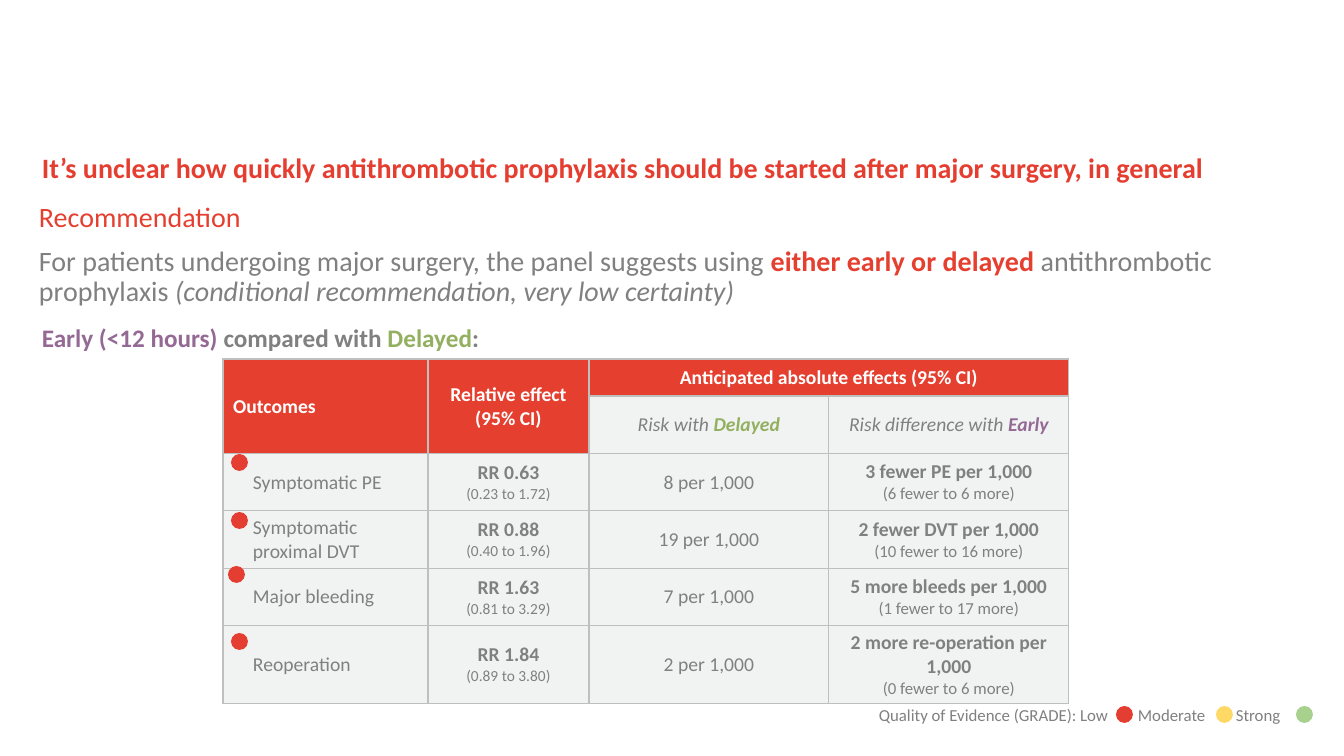
from lxml import etree
from pptx import Presentation
from pptx import util as u
from pptx.dml.color import RGBColor
from pptx.enum import shapes, text
from pptx.oxml import ns

EMU_PER_PX = 12192000 / 1344
FONT = "Calibri"
RED = RGBColor(0xE5, 0x3F, 0x2F)
TITLE_RED = RGBColor(0xE5, 0x3E, 0x31)
DOT_RED = RGBColor(0xE4, 0x3E, 0x32)
DOT_YELLOW = RGBColor(0xFF, 0xD9, 0x66)
DOT_GREEN = RGBColor(0xA9, 0xD1, 0x8E)
GREY = RGBColor(0x80, 0x80, 0x80)
PURPLE = RGBColor(0x94, 0x6A, 0x95)
GREEN = RGBColor(0x92, 0xB0, 0x60)
WHITE = RGBColor(0xFF, 0xFF, 0xFF)
PALE = RGBColor(0xF1, 0xF3, 0xF2)
BORDER = RGBColor(0xBF, 0xBF, 0xBF)

COLUMN_WIDTHS = [205, 161, 240, 240]
ROW_HEIGHTS = [37, 32, 57, 57, 57, 57]
# outcome, relative effect, its CI, risk with delayed, risk difference, its CI
OUTCOMES = [
    ("Symptomatic PE", "RR 0.63", "(0.23 to 1.72)", "8 per 1,000",
     "3 fewer PE per 1,000", "(6 fewer to 6 more)"),
    ("Symptomatic proximal DVT", "RR 0.88", "(0.40 to 1.96)", "19 per 1,000",
     "2 fewer DVT per 1,000", "(10 fewer to 16 more)"),
    ("Major bleeding", "RR 1.63", "(0.81 to 3.29)", "7 per 1,000",
     "5 more bleeds per 1,000", "(1 fewer to 17 more)"),
    ("Reoperation", "RR 1.84", "(0.89 to 3.80)", "2 per 1,000",
     "2 more re-operation per 1,000", "(0 fewer to 6 more)"),
]
OUTCOME_DOTS = [(231, 454), (231, 512), (228, 566), (231, 633)]
LEGEND_DOTS = [(1116, DOT_RED), (1216, DOT_YELLOW), (1296, DOT_GREEN)]
DOT_SIZE = 17


def px(length):
    return u.Emu(round(length * EMU_PER_PX))


def add_span(para, content, size=14, color=GREY, bold=False, italic=False):
    span = para.add_run()
    span.text = content
    font = span.font
    font.name, font.size, font.color.rgb = FONT, u.Pt(size), color
    font.bold, font.italic = bold, italic


def fill_paras(frame, paras, align=None, spacing=None, before=0):
    """Write paragraphs, each a list of (text, format) spans."""
    for index, spans in enumerate(paras):
        para = frame.add_paragraph() if index else frame.paragraphs[0]
        para.alignment = align
        para.line_spacing = spacing
        if index and before:
            para.space_before = u.Pt(before)
        for content, style in spans:
            add_span(para, content, **style)


def add_box(page, left, top, width, height, inset=None):
    frame = page.shapes.add_textbox(px(left), px(top), px(width), px(height)).text_frame
    frame.word_wrap = True
    if inset is not None:
        frame.margin_left = frame.margin_right = px(inset)
        frame.margin_top = frame.margin_bottom = px(inset)
    return frame


def add_dot(page, left, top, color):
    dot = page.shapes.add_shape(shapes.MSO_SHAPE.OVAL, px(left), px(top),
                                px(DOT_SIZE), px(DOT_SIZE))
    dot.shadow.inherit = False
    dot.fill.solid()
    dot.fill.fore_color.rgb = color
    dot.line.fill.background()


def add_tab_stops(para, positions):
    stops = etree.SubElement(para._p.get_or_add_pPr(), ns.qn("a:tabLst"))
    for position in positions:
        etree.SubElement(stops, ns.qn("a:tab"), pos=str(px(position)), algn="l")


def style_cell(cell, color):
    """Border first, then fill, as the schema orders them."""
    properties = cell._tc.get_or_add_tcPr()
    for side in ("lnL", "lnR", "lnT", "lnB"):
        line = etree.SubElement(properties, ns.qn(f"a:{side}"), w=str(u.Pt(1)))
        fill = etree.SubElement(line, ns.qn("a:solidFill"))
        etree.SubElement(fill, ns.qn("a:srgbClr"), val=str(BORDER))
    cell.fill.solid()
    cell.fill.fore_color.rgb = color
    cell.vertical_anchor = text.MSO_ANCHOR.MIDDLE


def add_outcome_table(page):
    table = page.shapes.add_table(
        len(ROW_HEIGHTS), len(COLUMN_WIDTHS), px(223), px(359),
        px(sum(COLUMN_WIDTHS)), px(sum(ROW_HEIGHTS))).table
    table.first_row = table.horz_banding = False
    for column, width in zip(table.columns, COLUMN_WIDTHS):
        column.width = px(width)
    for row, height in zip(table.rows, ROW_HEIGHTS):
        row.height = px(height)

    head = dict(color=WHITE, bold=True)
    lead = dict(italic=True)
    rows = [
        [[[("Outcomes", head)]], [[("Relative effect (95% CI)", head)]],
         [[("Anticipated absolute effects (95% CI)", head)]], []],
        [[], [],
         [[("Risk with ", lead), ("Delayed", dict(color=GREEN, bold=True, italic=True))]],
         [[("Risk difference with ", lead),
           ("Early", dict(color=PURPLE, bold=True, italic=True))]]],
    ]
    for outcome, ratio, ratio_ci, risk, difference, difference_ci in OUTCOMES:
        rows.append([
            [[(outcome, {})]],
            [[(ratio, dict(bold=True))], [(ratio_ci, dict(size=11))]],
            [[(risk, {})]],
            [[(difference, dict(bold=True))], [(difference_ci, dict(size=12))]],
        ])
    for r, row in enumerate(rows):
        for c, paras in enumerate(row):
            cell = table.cell(r, c)
            style_cell(cell, RED if r == 0 or (r == 1 and c < 2) else PALE)
            fill_paras(cell.text_frame, paras, text.PP_ALIGN.CENTER if c else None)
            if r > 1 and c == 0:
                cell.margin_left = px(30)
    table.cell(0, 0).merge(table.cell(1, 0))
    table.cell(0, 1).merge(table.cell(1, 1))
    table.cell(0, 2).merge(table.cell(0, 3))


def add_legend(page):
    frame = add_box(page, 869, 700, 457, 30)
    add_tab_stops(frame.paragraphs[0], [259, 357])
    fill_paras(frame, [[("Quality of Evidence (GRADE): Low\tModerate\tStrong", dict(size=12))]])
    for left, color in LEGEND_DOTS:
        add_dot(page, left, 706, color)


def main():
    deck = Presentation()
    deck.slide_width, deck.slide_height = px(1344), px(756)
    page = deck.slides.add_slide(deck.slide_layouts[6])

    add_outcome_table(page)
    fill_paras(add_box(page, 32, 149, 1210, 79), [[
        ("It’s unclear how quickly antithrombotic prophylaxis should be started "
         "after major surgery, in general", dict(size=20, color=TITLE_RED, bold=True)),
    ]], spacing=0.9)
    fill_paras(add_box(page, 39, 203, 1210, 173, inset=0), [
        [("Recommendation", dict(size=20, color=RED))],
        [("For patients undergoing major surgery, the panel suggests using ", dict(size=20)),
         ("either early or delayed ", dict(size=20, color=RED, bold=True)),
         ("antithrombotic prophylaxis ", dict(size=20)),
         ("(conditional recommendation, very low certainty)", dict(size=20, italic=True))],
    ], spacing=0.9, before=10)
    fill_paras(add_box(page, 32, 317, 619, 40), [[
        ("Early (<12 hours) ", dict(size=18, color=PURPLE, bold=True)),
        ("compared with ", dict(size=18, bold=True)),
        ("Delayed", dict(size=18, color=GREEN, bold=True)),
        (":", dict(size=18, bold=True)),
    ]])
    for left, top in OUTCOME_DOTS:
        add_dot(page, left, top, DOT_RED)
    add_legend(page)
    deck.save("out.pptx")


if __name__ == "__main__":
    main()
